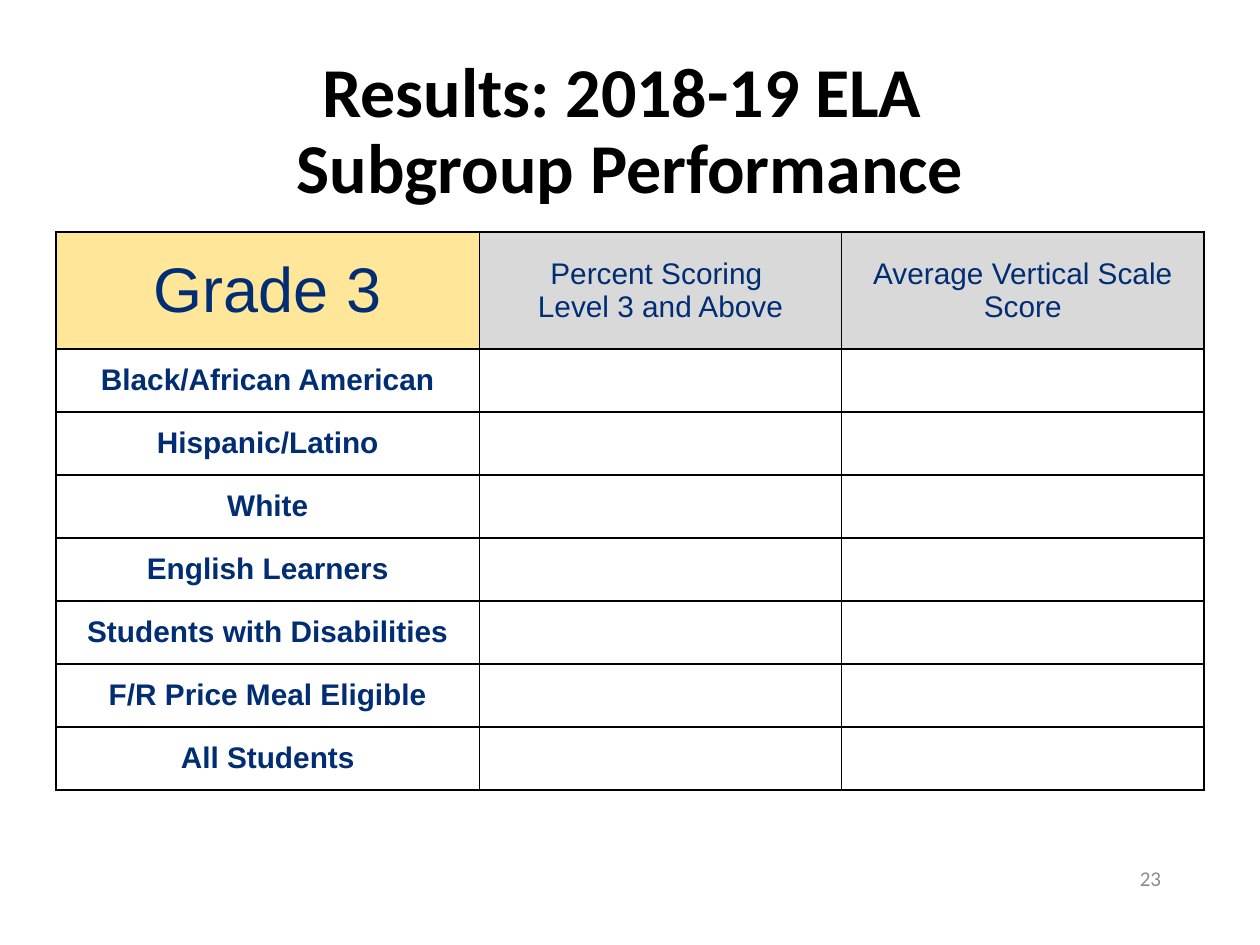
import copy

import pptx
import pptx.dml.color
import pptx.enum.text
import pptx.oxml
import pptx.oxml.ns
import pptx.util

Pt = pptx.util.Pt
Align = pptx.enum.text.PP_ALIGN
Anchor = pptx.enum.text.MSO_ANCHOR

COLORS = {
    "title": "000000",
    "navy": "002D73",
    "grade": "FFE699",
    "header": "D9D9D9",
    "body": "FFFFFF",
    "border": "000000",
    "number": "8C8C8C",
}
TITLE = "Results: 2018-19 ELA \vSubgroup Performance"
PAGE_NUMBER = "23"
HEADERS = [
    ("Grade 3", 36, "grade"),
    ("Percent Scoring \nLevel 3 and Above", 17, "header"),
    ("Average Vertical Scale Score", 17, "header"),
]
SUBGROUPS = [
    "Black/African American",
    "Hispanic/Latino",
    "White",
    "English Learners",
    "Students with Disabilities",
    "F/R Price Meal Eligible",
    "All Students",
]
COLUMN_WIDTHS = [242, 207, 207]
ROW_HEIGHTS = [67] + [36] * len(SUBGROUPS)
TABLE_LEFT, TABLE_TOP = 32, 132.5


def write_text(text_frame, text, size, color, font="Arial", bold=False,
               align=Align.CENTER, line_spacing=None):
    text_frame.text = text
    text_frame.word_wrap = True
    for paragraph in text_frame.paragraphs:
        paragraph.alignment = align
        paragraph.line_spacing = line_spacing
        for run in paragraph.runs:
            run.font.name = font
            run.font.size = Pt(size)
            run.font.bold = bold
            run.font.color.rgb = pptx.dml.color.RGBColor.from_string(COLORS[color])
        for line_break in paragraph._p.findall(pptx.oxml.ns.qn("a:br")):
            line_break.append(copy.deepcopy(paragraph.runs[0]._r.rPr))


def format_cell(cell, fill):
    cell.vertical_anchor = Anchor.MIDDLE
    properties = cell._tc.get_or_add_tcPr()
    for side in ("lnL", "lnR", "lnT", "lnB"):
        properties.append(pptx.oxml.parse_xml(
            f'<a:{side} {pptx.oxml.ns.nsdecls("a")} w="{Pt(1)}"><a:solidFill>'
            f'<a:srgbClr val="{COLORS["border"]}"/></a:solidFill></a:{side}>'))
    cell.fill.solid()
    cell.fill.fore_color.rgb = pptx.dml.color.RGBColor.from_string(COLORS[fill])


def add_results_table(slide):
    frame = slide.shapes.add_table(
        len(ROW_HEIGHTS), len(COLUMN_WIDTHS), Pt(TABLE_LEFT), Pt(TABLE_TOP),
        Pt(sum(COLUMN_WIDTHS)), Pt(sum(ROW_HEIGHTS)))
    table = frame.table
    table.first_row = False
    table.horz_banding = False
    for column, width in zip(table.columns, COLUMN_WIDTHS):
        column.width = Pt(width)
    for row, height in zip(table.rows, ROW_HEIGHTS):
        row.height = Pt(height)
    for index, (text, size, fill) in enumerate(HEADERS):
        cell = table.cell(0, index)
        format_cell(cell, fill)
        write_text(cell.text_frame, text, size, "navy")
    for row, subgroup in enumerate(SUBGROUPS, start=1):
        for column in range(len(COLUMN_WIDTHS)):
            format_cell(table.cell(row, column), "body")
        write_text(table.cell(row, 0).text_frame, subgroup, 17, "navy", bold=True)


def main():
    presentation = pptx.Presentation()
    presentation.slide_width, presentation.slide_height = Pt(720), Pt(540)
    slide = presentation.slides.add_slide(presentation.slide_layouts[5])

    title = slide.shapes.title
    title.left, title.top, title.width, title.height = Pt(0), Pt(29), Pt(720), Pt(93.5)
    title.text_frame.vertical_anchor = Anchor.MIDDLE
    write_text(title.text_frame, TITLE, 40, "title", font="Calibri", bold=True,
               line_spacing=0.9)

    add_results_table(slide)

    number = slide.shapes.add_textbox(Pt(508.5), Pt(487.5), Pt(162), Pt(28.75))
    number.text_frame.vertical_anchor = Anchor.MIDDLE
    write_text(number.text_frame, PAGE_NUMBER, 12, "number", font="Calibri",
               align=Align.RIGHT)

    presentation.save("out.pptx")


if __name__ == "__main__":
    main()
